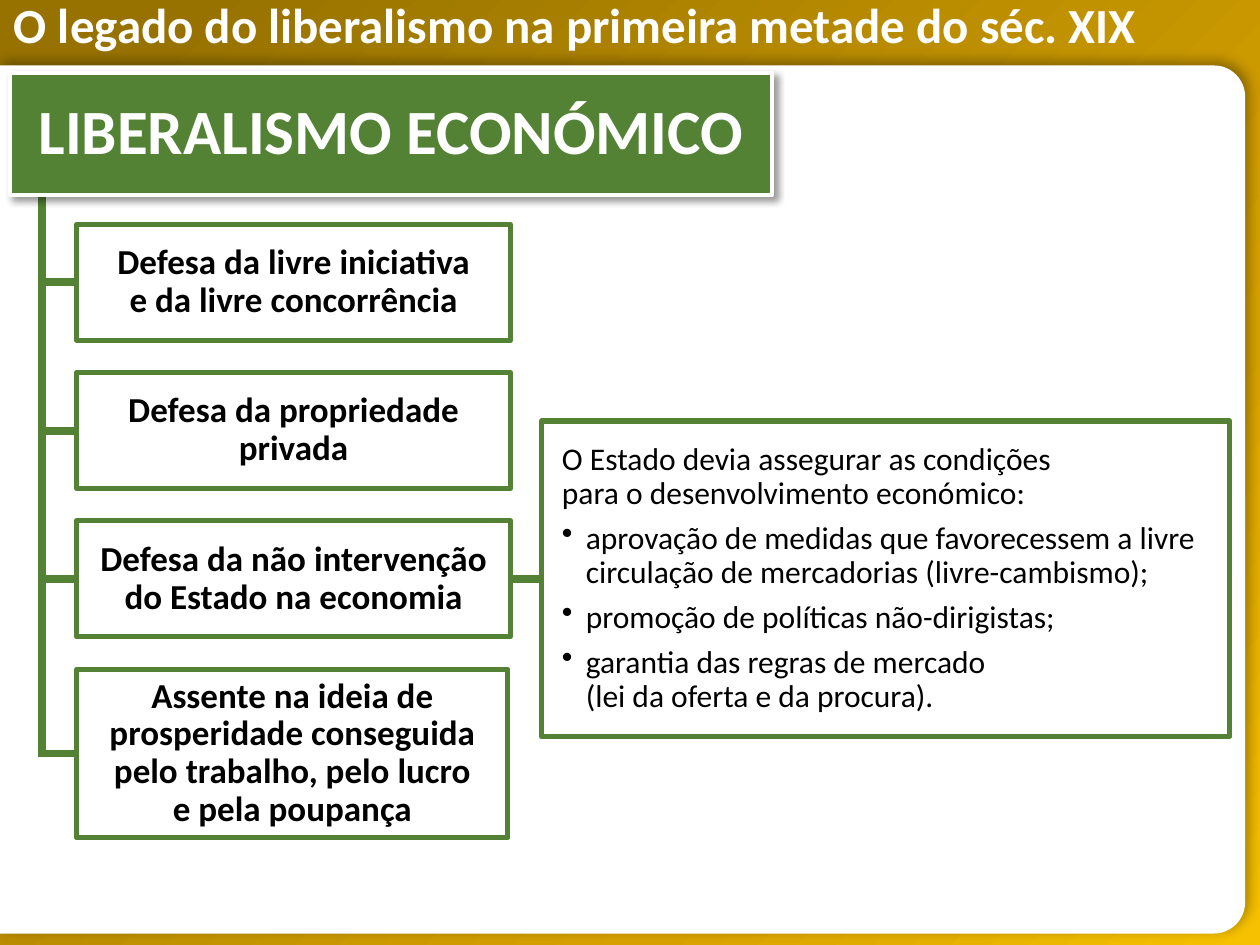
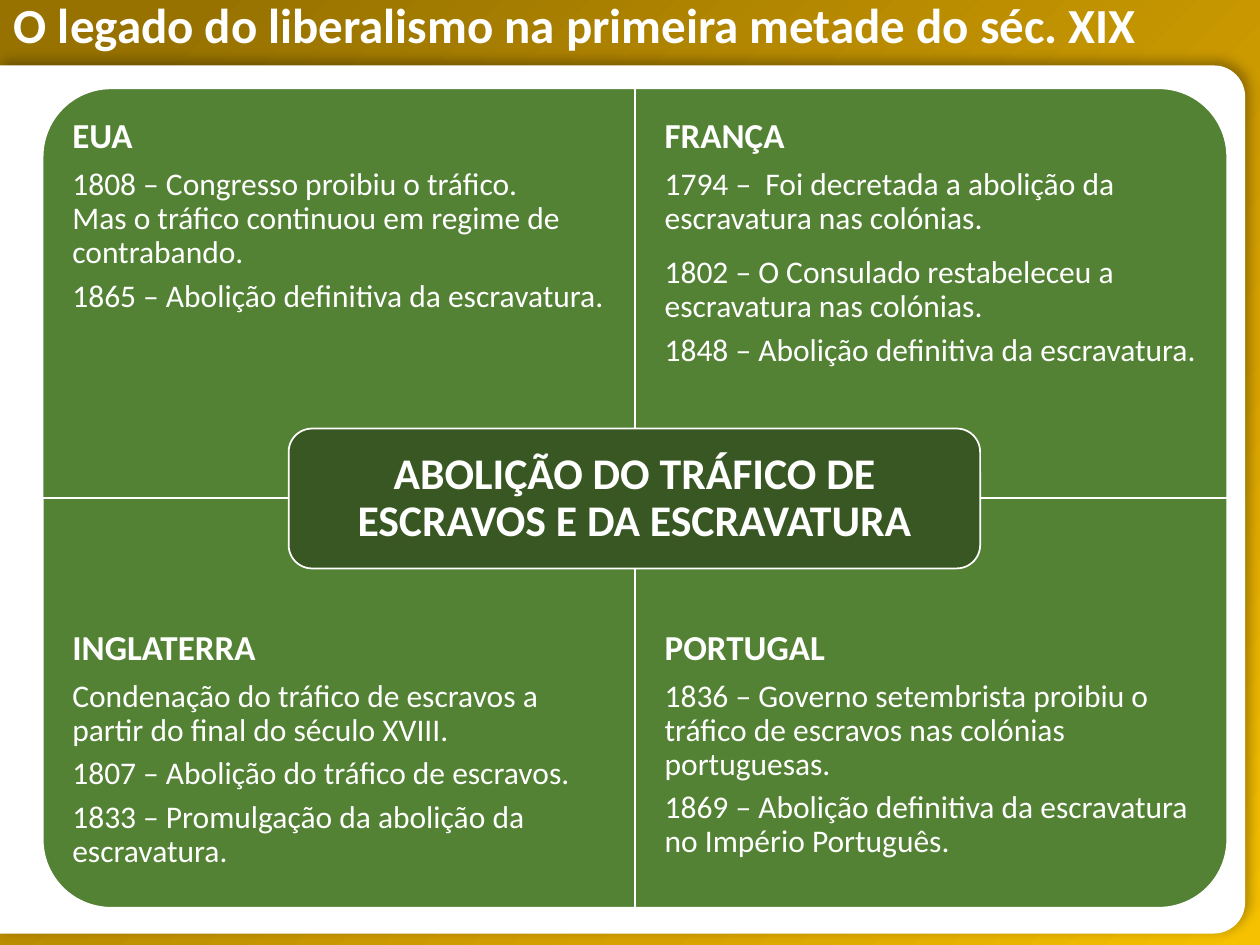
from copy import deepcopy

from lxml import etree
from pptx import Presentation
from pptx.dml.color import RGBColor
from pptx.enum.shapes import MSO_CONNECTOR, MSO_SHAPE
from pptx.enum.text import MSO_ANCHOR, PP_ALIGN
from pptx.oxml.ns import qn
from pptx.util import Cm, Pt

COLORS = {
    "gold_dark": "977200", "gold": "D7A200", "gold_light": "F6C100",
    "green": "548235", "green_dark": "385723",
    "white": "FFFFFF", "black": "000000",
}
FONT = "Calibri"
TITLE = "O legado do liberalismo na primeira metade do séc. XIX"
WIDTH, HEIGHT = 25.4, 19.05


class Deck:
    def __init__(self):
        self.prs = Presentation()
        self.prs.slide_width, self.prs.slide_height = Cm(WIDTH), Cm(HEIGHT)
        self.slide = None

    def color(self, name):
        return RGBColor.from_string(COLORS[name])

    def new_slide(self):
        """Start a slide with the gold band, title and white panel."""
        self.slide = self.prs.slides.add_slide(self.prs.slide_layouts[6])
        backdrop = self.shape(MSO_SHAPE.RECTANGLE, 0, 0, WIDTH, HEIGHT)
        self.gradient(backdrop, [(0.09, "gold_dark"), (0.72, "gold"), (1, "gold_light")])

        title = self.text_box(0.03, 0.38, 24.38, 0.94)
        self.set_text(title, [(TITLE, 28, True, 0)], insets=(0.25, 0.13, 0.25, 0.13),
                      spacing=Pt(16))

        # Turned a quarter so that its two rounded corners face right
        panel = self.shape(MSO_SHAPE.ROUND_2_SAME_RECTANGLE, 0, 1.32, 25.1, 17.5,
                           "white", rotation=90)
        panel.adjustments[0] = 0.036
        self.shadow(panel, opacity=30, blur=7, direction=315)

    def shape(self, kind, left, top, width, height, fill=None, line=None,
              weight=1, rotation=0):
        """Add a shape whose box is given as it appears after rotation."""
        if rotation % 180:
            left, top = left + (width - height) / 2, top + (height - width) / 2
            width, height = height, width
        shape = self.slide.shapes.add_shape(
            kind, Cm(left), Cm(top), Cm(width), Cm(height))
        shape.rotation = rotation
        shape.shadow.inherit = False
        if fill:
            shape.fill.solid()
            shape.fill.fore_color.rgb = self.color(fill)
        if line:
            shape.line.color.rgb = self.color(line)
            shape.line.width = Pt(weight)
        else:
            shape.line.fill.background()
        return shape

    def gradient(self, shape, stops):
        shape.fill.gradient()
        shape.fill.gradient_angle = 315
        stop_list = shape.element.spPr.find(".//" + qn("a:gsLst"))
        stop_list.append(deepcopy(stop_list[-1]))
        for stop, (position, name) in zip(shape.fill.gradient_stops, stops):
            stop.position = position
            stop.color.rgb = self.color(name)

    def shadow(self, shape, opacity, blur, direction):
        effects = shape.element.spPr.find(qn("a:effectLst"))
        outer = etree.SubElement(
            effects, qn("a:outerShdw"), blurRad=str(Pt(blur)), dist=str(Pt(3)),
            dir=str(direction * 60000), algn="ctr", rotWithShape="0")
        tint = etree.SubElement(outer, qn("a:srgbClr"), val=COLORS["black"])
        etree.SubElement(tint, qn("a:alpha"), val=str(opacity * 1000))

    def text_box(self, left, top, width, height):
        return self.slide.shapes.add_textbox(Cm(left), Cm(top), Cm(width), Cm(height))

    def set_text(self, shape, paragraphs, color="white", align=PP_ALIGN.LEFT,
                 anchor=MSO_ANCHOR.TOP, insets=(0.03,) * 4, spacing=0.9):
        """Fill a shape with (text, size, bold, space after) paragraphs."""
        frame = shape.text_frame
        frame.word_wrap = True
        frame.vertical_anchor = anchor
        (frame.margin_left, frame.margin_top,
         frame.margin_right, frame.margin_bottom) = map(Cm, insets)
        frame.text = "\n".join(text for text, *_ in paragraphs)
        for paragraph, (_, size, bold, after) in zip(frame.paragraphs, paragraphs):
            paragraph.alignment = align
            paragraph.line_spacing = spacing
            paragraph.space_after = Pt(after)
            for run in paragraph.runs:
                run.font.name = FONT
                run.font.size = Pt(size)
                run.font.bold = bold
                run.font.color.rgb = self.color(color)

    def bullet(self, paragraph):
        properties = paragraph._p.get_or_add_pPr()
        properties.set("marL", str(Cm(0.48)))
        properties.set("indent", str(-Cm(0.48)))
        etree.SubElement(properties, qn("a:buChar"), char="•")

    def connector(self, start, end, begin_box=None, end_box=None):
        """Draw a green line, leaving begin_box on its right, entering end_box on its left."""
        line = self.slide.shapes.add_connector(MSO_CONNECTOR.STRAIGHT, *start, *end)
        line.line.color.rgb = self.color("green")
        line.line.width = Pt(4.5)
        etree.SubElement(line.element.spPr, qn("a:effectLst"))
        if begin_box is not None:
            line.begin_connect(begin_box, 3)
        if end_box is not None:
            line.end_connect(end_box, 1)

    def outlined_box(self, left, top, width, height):
        return self.shape(MSO_SHAPE.RECTANGLE, left, top, width, height,
                          "white", "green", 3)


def middle(box):
    return box.top + box.height // 2


def economic_liberalism(deck):
    principles = [
        ("Defesa da livre iniciativa\ve da livre concorrência", 8.74, 2.34),
        ("Defesa da propriedade privada", 8.74, 2.34),
        ("Defesa da não intervenção\vdo Estado na economia", 8.74, 2.34),
        ("Assente na ideia de prosperidade conseguida pelo trabalho, pelo lucro"
         "\ve pela poupança", 8.69, 3.4),
    ]
    state_role = [
        "O Estado devia assegurar as condições\vpara o desenvolvimento económico:",
        "aprovação de medidas que favorecessem a livre circulação de mercadorias "
        "(livre-cambismo);",
        "promoção de políticas não-dirigistas;",
        "garantia das regras de mercado\v(lei da oferta e da procura).",
    ]
    trunk = Cm(0.84)
    deck.new_slide()

    boxes = []
    for row, (text, width, height) in enumerate(principles):
        box = deck.outlined_box(1.55, 4.52 + 2.99 * row, width, height)
        deck.set_text(box, [(text, 20, True, 7)], "black", PP_ALIGN.CENTER,
                      MSO_ANCHOR.MIDDLE)
        deck.connector((trunk, middle(box)), (box.left, middle(box)), end_box=box)
        boxes.append(box)
    deck.connector((trunk, Cm(3.86)), (trunk, middle(boxes[-1]) + Cm(0.08)))

    no_intervention = boxes[2]
    details = deck.outlined_box(10.92, 8.49, 13.87, 6.36)
    deck.set_text(details, [(text, 18, False, 6.3) for text in state_role], "black",
                  anchor=MSO_ANCHOR.MIDDLE, insets=(0.41, 0.03, 0.03, 0.03))
    for paragraph in details.text_frame.paragraphs[1:]:
        deck.bullet(paragraph)
    deck.connector((no_intervention.left + no_intervention.width, middle(no_intervention)),
                   (details.left, middle(details)), no_intervention, details)

    header = deck.shape(MSO_SHAPE.RECTANGLE, 0.2, 1.47, 15.37, 2.46, "green", "white", 2.25)
    deck.shadow(header, opacity=40, blur=4, direction=45)
    deck.set_text(header, [("LIBERALISMO ECONÓMICO", 36, True, 0)], align=PP_ALIGN.CENTER,
                  anchor=MSO_ANCHOR.MIDDLE, insets=(0.2, 0.18, 0.2, 0.18))


def abolition(deck):
    # Country, turn of its rounded corner, (event, space after)
    countries = [
        ("EUA", 270, [
            ("1808 – Congresso proibiu o tráfico.\vMas o tráfico continuou em regime "
             "de contrabando.", 5.5),
            ("1865 – Abolição definitiva da escravatura.", 0)]),
        ("FRANÇA", 0, [
            ("1794 –  Foi decretada a abolição da escravatura nas colónias.", 11.5),
            ("1802 – O Consulado restabeleceu a escravatura nas colónias.", 5.5),
            ("1848 – Abolição definitiva da escravatura.", 0)]),
        ("INGLATERRA", 180, [
            ("Condenação do tráfico de escravos a partir do final do século XVIII.", 5.5),
            ("1807 – Abolição do tráfico de escravos.", 5.5),
            ("1833 – Promulgação da abolição da escravatura.", 0)]),
        ("PORTUGAL", 90, [
            ("1836 – Governo setembrista proibiu o tráfico de escravos nas colónias "
             "portuguesas.", 5.5),
            ("1869 – Abolição definitiva da escravatura no Império Português.", 0)]),
    ]
    width, height, text_height = 11.94, 8.26, 6.2
    deck.new_slide()

    for index, (country, rotation, events) in enumerate(countries):
        row, column = divmod(index, 2)
        left, top = 0.86 + column * width, 1.78 + row * height
        deck.shape(MSO_SHAPE.ROUND_1_RECTANGLE, left, top, width, height,
                   "green", "white", rotation=rotation)
        story = deck.text_box(left, top + row * (height - text_height), width, text_height)
        deck.set_text(story, [(country, 20, True, 7)]
                      + [(event, 18, False, after) for event, after in events],
                      insets=(0.6, 0.6, 0.4, 0))

    theme = deck.shape(MSO_SHAPE.ROUNDED_RECTANGLE, 5.82, 8.64, 13.94, 2.82,
                       "green_dark", "white")
    deck.set_text(theme, [("ABOLIÇÃO DO TRÁFICO DE ESCRAVOS E DA ESCRAVATURA", 25, True, 0)],
                  align=PP_ALIGN.CENTER, anchor=MSO_ANCHOR.MIDDLE, insets=(0.38,) * 4)


def main():
    deck = Deck()
    economic_liberalism(deck)
    abolition(deck)
    deck.prs.save("out.pptx")


if __name__ == "__main__":
    main()
